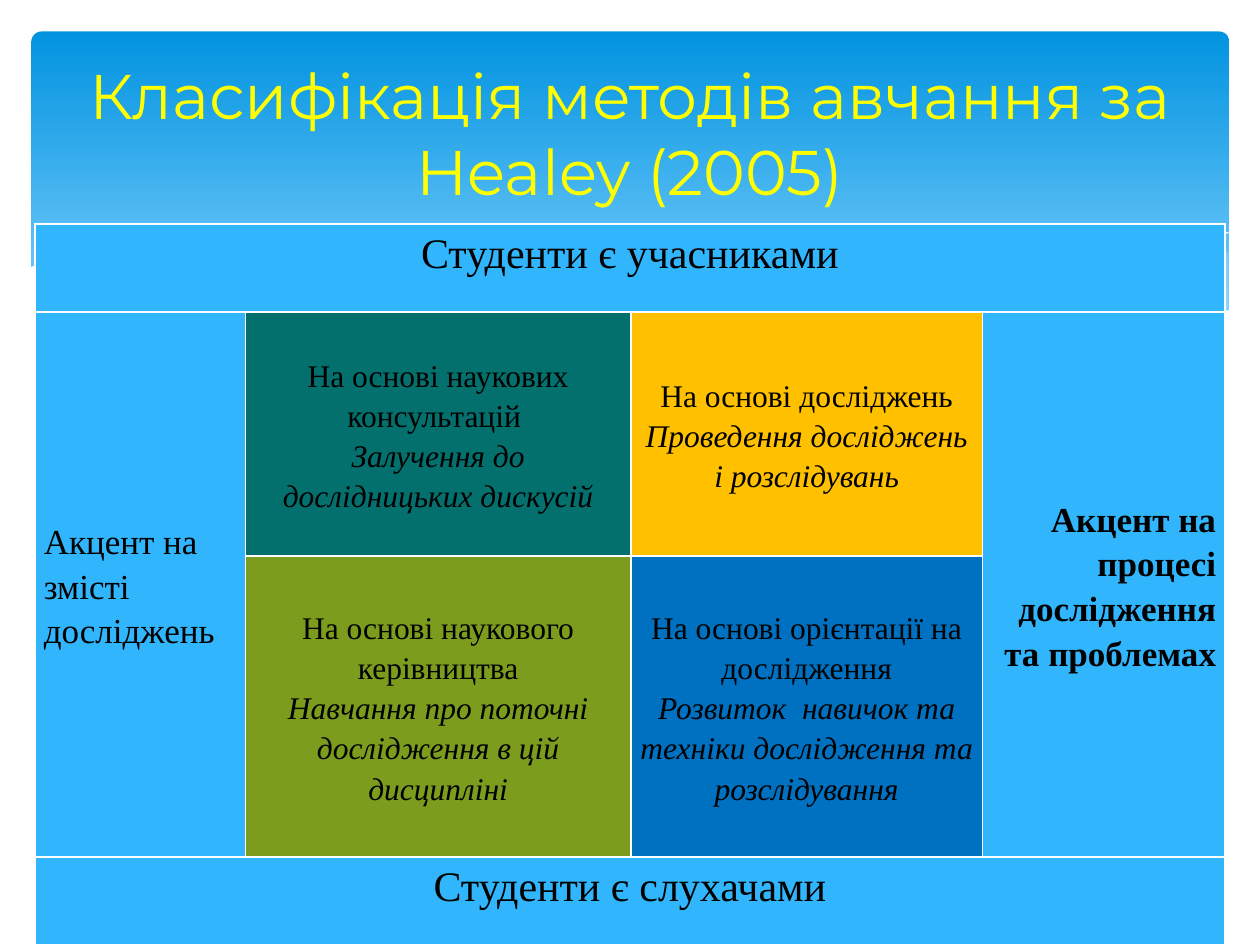
from dataclasses import dataclass

from lxml import etree
from pptx import Presentation
from pptx.dml.color import RGBColor
from pptx.enum.shapes import MSO_SHAPE
from pptx.enum.text import MSO_ANCHOR, PP_ALIGN
from pptx.oxml.ns import qn
from pptx.util import Pt

ROUNDED = MSO_SHAPE.ROUNDED_RECTANGLE
TOP, MIDDLE = MSO_ANCHOR.TOP, MSO_ANCHOR.MIDDLE
LEFT, CENTER, RIGHT = PP_ALIGN.LEFT, PP_ALIGN.CENTER, PP_ALIGN.RIGHT

WHITE, BLACK, YELLOW = "FFFFFF", "000000", "FFFF00"
SKY, PALE = "31B6FD", "C6E7FC"
COLUMN_WIDTHS = (120.25, 220.25, 201, 138.5)
ROW_HEIGHTS = (50.25, 139.5, 172, 50.25)


@dataclass
class Wave:
    points: list[tuple[float, float]]
    fill: str = ""
    opacity: int = 100


@dataclass
class Block:
    row: int
    column: int
    last_row: int
    last_column: int
    text: str
    fill: str = SKY
    detail: str = ""
    size: float = 18
    bold: bool = False
    align: PP_ALIGN = CENTER
    anchor: MSO_ANCHOR = MIDDLE


WAVES = [
    Wave([(702, 144), (652, 153), (561, 173), (476, 191), (527, 197),
          (578, 200), (627, 198), (673, 190), (702, 178)], PALE, 29),
    Wave([(643, 197), (581, 187), (508, 173), (453, 160), (400, 148),
          (352, 140), (302, 134), (260, 133), (206, 138), (261, 146),
          (323, 160), (408, 179), (468, 190), (539, 198), (596, 200)], PALE, 40),
    Wave([(222, 140), (254, 136), (300, 135), (352, 137), (400, 142),
          (458, 150), (523, 163), (598, 181), (653, 196)]),
    Wave([(441, 185), (500, 169), (580, 151), (655, 138), (702, 133)]),
    Wave([(703, 177), (655, 192), (602, 199), (548, 198), (481, 191),
          (400, 176), (322, 158), (245, 142), (180, 134), (127, 132),
          (86, 135), (48, 143), (26, 149), (17, 153), (17, 237), (703, 237)], WHITE),
]

BLOCKS = [
    Block(0, 0, 0, 3, "Студенти є учасниками", size=24, anchor=TOP),
    Block(1, 0, 2, 0, "Акцент на змісті досліджень", size=20, align=LEFT),
    Block(1, 1, 1, 1, "На основі наукових консультацій ", "03706E",
          "Залучення до дослідницьких дискусій"),
    Block(1, 2, 1, 2, "На основі досліджень", "FFC000",
          "Проведення досліджень і розслідувань"),
    Block(1, 3, 2, 3, "Акцент на процесі дослідження та проблемах",
          size=20, bold=True, align=RIGHT),
    Block(2, 1, 2, 1, "На основі наукового керівництва", "7C9C1E",
          "Навчання про поточні дослідження в цій дисципліні"),
    Block(2, 2, 2, 2, "На основі орієнтації на дослідження", "0070C0",
          "Розвиток  навичок та техніки дослідження та розслідування"),
    Block(3, 0, 3, 3, "Студенти є слухачами", size=24, anchor=TOP),
]


def color(value: str) -> RGBColor:
    return RGBColor.from_string(value)


def draw_panel(page) -> None:
    panel = page.shapes.add_shape(ROUNDED, Pt(18), Pt(18), Pt(684.5), Pt(194.5))
    panel.adjustments[0] = 0.03
    panel.shadow.inherit = False
    panel.line.fill.background()
    panel.fill.gradient()
    panel.fill.gradient_angle = 270
    for stop, position, shade in zip(panel.fill.gradient_stops, (0, 0.9),
                                     ("0293E0", "83D3FE")):
        stop.position = position
        stop.color.rgb = color(shade)


def draw_wave(page, wave: Wave) -> None:
    points = [(Pt(x), Pt(y)) for x, y in wave.points]
    builder = page.shapes.build_freeform(*points[0], scale=1.0)
    builder.add_line_segments(points[1:], close=bool(wave.fill))
    shape = builder.convert_to_shape()
    shape.shadow.inherit = False
    if not wave.fill:
        shape.fill.background()
        shape.line.color.rgb = color(WHITE)
        shape.line.width = Pt(0)
        return
    shape.line.fill.background()
    shape.fill.solid()
    shape.fill.fore_color.rgb = color(wave.fill)
    if wave.opacity < 100:
        fill = shape.element.spPr.find(qn("a:solidFill"))
        etree.SubElement(fill[0], qn("a:alpha"), val=str(wave.opacity * 1000))


def add_borders(cell) -> None:
    properties = cell._tc.get_or_add_tcPr()
    for side in ("lnL", "lnR", "lnT", "lnB"):
        line = etree.SubElement(properties, qn(f"a:{side}"), w=str(Pt(1)))
        fill = etree.SubElement(line, qn("a:solidFill"))
        etree.SubElement(fill, qn("a:srgbClr"), val=WHITE)


def write_paragraph(para, text: str, size: float, shade: str, font: str,
                    align: PP_ALIGN) -> None:
    para.text = text
    para.alignment = align
    para.font.name = font
    para.font.size = Pt(size)
    para.font.color.rgb = color(shade)


def fill_block(table, block: Block) -> None:
    cell = table.cell(block.row, block.column)
    end = table.cell(block.last_row, block.last_column)
    if (block.row, block.column) != (block.last_row, block.last_column):
        cell.merge(end)
    cell.vertical_anchor = block.anchor
    cell.margin_left = cell.margin_right = Pt(5)
    cell.margin_top = cell.margin_bottom = 0
    cell.fill.solid()
    cell.fill.fore_color.rgb = color(block.fill)
    frame = cell.text_frame
    for index, text in enumerate(filter(None, (block.text, block.detail))):
        para = frame.add_paragraph() if index else frame.paragraphs[0]
        write_paragraph(para, text, block.size, BLACK, "Times New Roman", block.align)
        para.line_spacing = 1.15
        para.font.bold = block.bold
        para.font.italic = index > 0


def draw_table(page) -> None:
    table = page.shapes.add_table(
        len(ROW_HEIGHTS), len(COLUMN_WIDTHS), Pt(20), Pt(128),
        Pt(sum(COLUMN_WIDTHS)), Pt(sum(ROW_HEIGHTS))).table
    table.first_row = table.horz_banding = False
    for column, width in zip(table.columns, COLUMN_WIDTHS):
        column.width = Pt(width)
    for row, height in zip(table.rows, ROW_HEIGHTS):
        row.height = Pt(height)
    for cell in table.iter_cells():
        add_borders(cell)
    for block in BLOCKS:
        fill_block(table, block)


def draw_title(page) -> None:
    box = page.shapes.add_textbox(Pt(36), Pt(26.5), Pt(648), Pt(98.5))
    frame = box.text_frame
    frame.word_wrap = True
    frame.vertical_anchor = MIDDLE
    write_paragraph(frame.paragraphs[0], "Класифікація методів авчання за Healey (2005)",
                    36, YELLOW, "Montserrat", CENTER)


def main() -> None:
    deck = Presentation()
    deck.slide_width, deck.slide_height = Pt(720), Pt(540)
    page = deck.slides.add_slide(deck.slide_layouts[6])

    # Header panel with waves along its lower edge
    draw_panel(page)
    for wave in WAVES:
        draw_wave(page, wave)

    # Matrix of teaching methods
    draw_table(page)

    # Title
    draw_title(page)
    deck.save("out.pptx")


if __name__ == "__main__":
    main()
